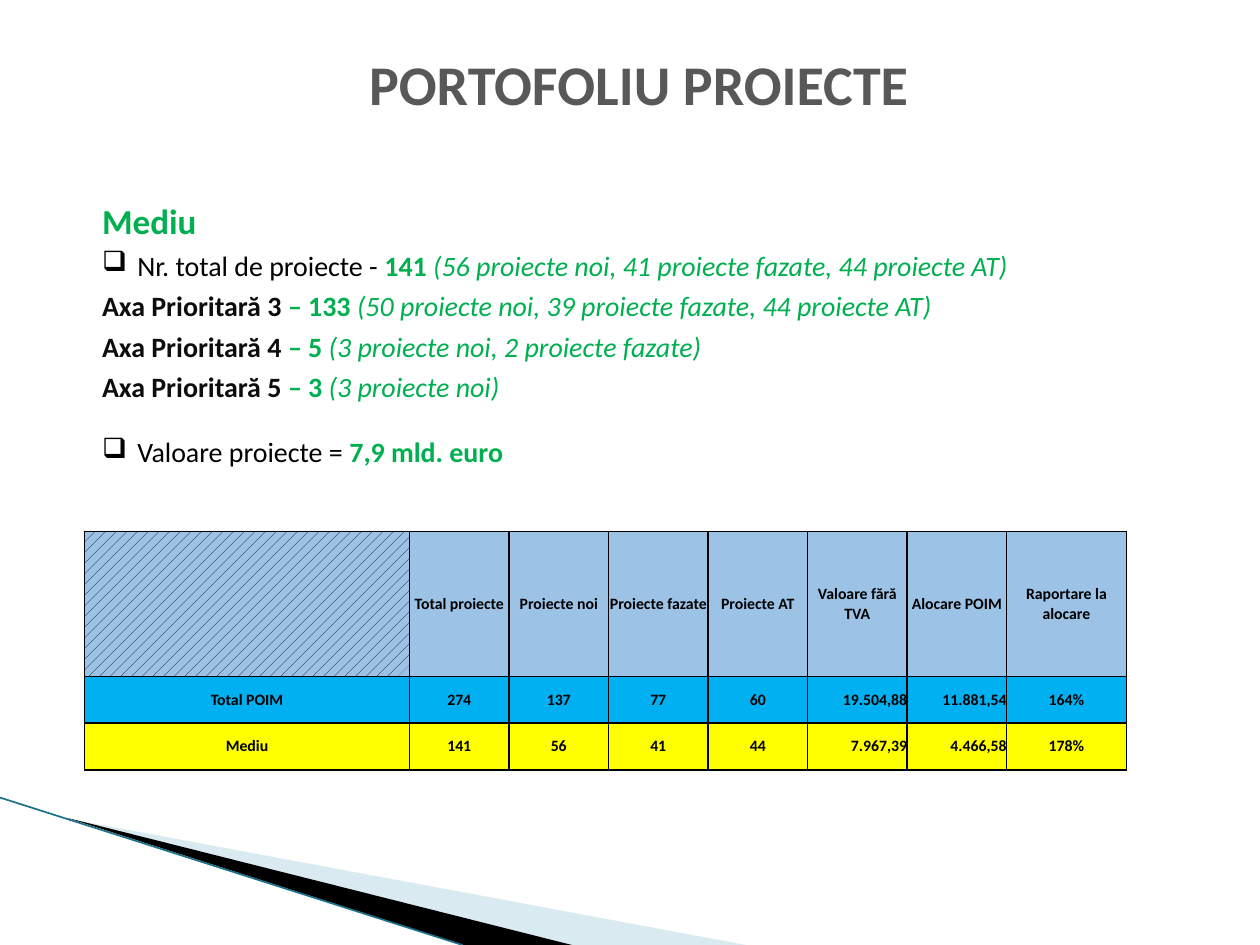
"""Build the project portfolio slide for the environment sector."""
from lxml import etree
from pptx import Presentation
from pptx.dml.color import RGBColor
from pptx.enum.dml import MSO_PATTERN
from pptx.enum.shapes import MSO_CONNECTOR
from pptx.enum.text import MSO_ANCHOR, PP_ALIGN
from pptx.oxml import parse_xml
from pptx.oxml.ns import nsdecls, qn
from pptx.util import Inches, Pt

HATCH = MSO_PATTERN.PERCENT_20
STRAIGHT = MSO_CONNECTOR.STRAIGHT
MIDDLE = MSO_ANCHOR.MIDDLE
CENTER, RIGHT = PP_ALIGN.CENTER, PP_ALIGN.RIGHT

BLACK = RGBColor(0x00, 0x00, 0x00)
INK = RGBColor(0x0D, 0x0D, 0x0D)
GRAY = RGBColor(0x58, 0x58, 0x58)
GREEN = RGBColor(0x00, 0xB0, 0x50)
PALE = RGBColor(0xA0, 0xCB, 0xDC)
TEAL = RGBColor(0x1A, 0x71, 0x87)
HEADER = RGBColor(0x9C, 0xC3, 0xE6)
BLUE = RGBColor(0x00, 0xB0, 0xF0)
YELLOW = RGBColor(0xFF, 0xFF, 0x00)


def add_run(p, text, size, color, bold=False, italic=False):
    r = p.add_run()
    r.text = text
    r.font.name = "Calibri"
    r.font.size = Pt(size)
    r.font.color.rgb = color
    r.font.bold = bold
    r.font.italic = italic


def add_text_frame(s, left, top, width, height):
    tf = s.shapes.add_textbox(Inches(left), Inches(top), Inches(width), Inches(height)).text_frame
    tf.word_wrap = True
    tf.margin_left = tf.margin_right = tf.margin_top = tf.margin_bottom = 0
    return tf


prs = Presentation()
prs.slide_width, prs.slide_height = Inches(10), Inches(7.5)
s = prs.slides.add_slide(prs.slide_layouts[6])

# fmt: off
wedges = [
    (PALE, [(0.55, 6.5), (5.92, 7.5), (4.54, 7.5)]),
    (BLACK, [(0.53, 6.49), (4.54, 7.5), (3.68, 7.5)]),
]
# fmt: on
for color, points in wedges:
    corners = [(Inches(x), Inches(y)) for x, y in points]
    fb = s.shapes.build_freeform(*corners[0], scale=1.0)
    fb.add_line_segments(corners[1:], close=True)
    sp = fb.convert_to_shape()
    sp.shadow.inherit = False
    sp.fill.solid()
    sp.fill.fore_color.rgb = color
    sp.line.fill.background()
    if color == PALE:
        clr = sp.fill._xPr.find(qn("a:solidFill"))[0]
        etree.SubElement(clr, qn("a:alpha"), val="40000")

edge = s.shapes.add_connector(STRAIGHT, Inches(0), Inches(6.33), Inches(3.67), Inches(7.5))
edge.line.color.rgb = TEAL
edge.line.width = Pt(0.95)
etree.SubElement(edge._element.spPr, qn("a:effectLst"))

tf = add_text_frame(s, 0.57, 0.39, 9, 0.85)
p = tf.paragraphs[0]
p.alignment = CENTER
add_run(p, "PORTOFOLIU PROIECTE", 32, GRAY, bold=True)

tf = add_text_frame(s, 0.81, 1.58, 8.75, 2.3)
add_run(tf.paragraphs[0], "Mediu", 20, GREEN, bold=True)
lines = [
    (True, 4, "Nr. total de proiecte - ", "141 ", "(56 proiecte noi, 41 proiecte fazate, 44 proiecte AT)"),
    (False, 4, "Axa Prioritară 3 ", "– 133 ", "(50 proiecte noi, 39 proiecte fazate, 44 proiecte AT)"),
    (False, 4, "Axa Prioritară 4 ", "– 5 ", "(3 proiecte noi, 2 proiecte fazate)"),
    (False, 4, "Axa Prioritară 5 ", "– 3 ", "(3 proiecte noi)"),
    (True, 18, "Valoare proiecte = ", "7,9 mld. euro", ""),
]
for bullet, before, label, figure, detail in lines:
    p = tf.add_paragraph()
    p.space_before = Pt(before)
    if bullet:
        pPr = p._p.get_or_add_pPr()
        pPr.set("marL", str(Inches(0.28)))
        pPr.set("indent", str(Inches(-0.28)))
        etree.SubElement(pPr, qn("a:buChar"), char="❑")
    add_run(p, label, 16, BLACK if bullet else INK, bold=not bullet)
    add_run(p, figure, 16, GREEN, bold=True)
    if detail:
        add_run(p, detail, 16, GREEN, italic=True)

rows = [
    (HEADER, 1.15, ["", "Total proiecte", "Proiecte noi", "Proiecte fazate", "Proiecte AT",
                    "Valoare fără TVA", "Alocare POIM", "Raportare la alocare"]),
    (BLUE, 0.37, ["Total POIM", "274", "137", "77", "60", "19.504,88", "11.881,54", "164%"]),
    (YELLOW, 0.37, ["Mediu", "141", "56", "41", "44", "7.967,39", "4.466,58", "178%"]),
]
widths = [2.58] + [0.79] * 6 + [0.95]
table = s.shapes.add_table(len(rows), len(widths), Inches(0.67), Inches(4.22),
                           Inches(sum(widths)), Inches(1.89)).table
for column, width in zip(table.columns, widths):
    column.width = Inches(width)
for i, (color, height, texts) in enumerate(rows):
    table.rows[i].height = Inches(height)
    for j, text in enumerate(texts):
        cell = table.cell(i, j)
        cell.margin_left = cell.margin_right = cell.margin_top = cell.margin_bottom = 0
        cell.vertical_anchor = MIDDLE
        tcPr = cell._tc.get_or_add_tcPr()
        for side in ("lnL", "lnR", "lnT", "lnB"):
            tcPr.append(parse_xml(
                f'<a:{side} {nsdecls("a")} w="{Pt(1)}"><a:solidFill>'
                f'<a:srgbClr val="{BLACK}"/></a:solidFill></a:{side}>'))
        if text:
            cell.fill.solid()
            cell.fill.fore_color.rgb = color
            p = cell.text_frame.paragraphs[0]
            p.alignment = RIGHT if i > 0 and j in (5, 6) else CENTER
            add_run(p, text, 9, BLACK, bold=True)
        else:
            cell.fill.patterned()
            cell.fill.pattern = HATCH
            cell.fill.fore_color.rgb = BLACK
            cell.fill.back_color.rgb = color

prs.save("out.pptx")
